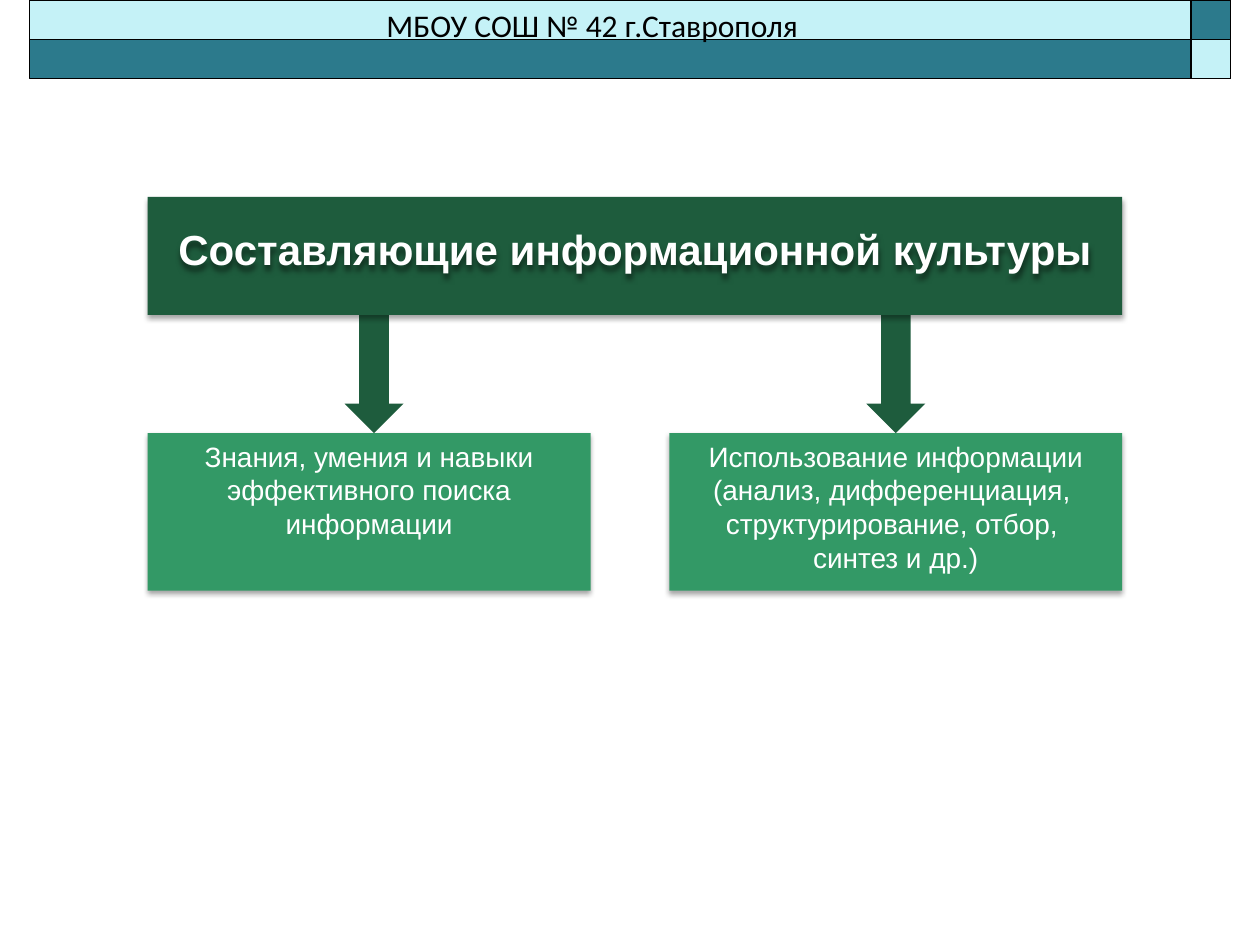
from dataclasses import dataclass

import pptx
import pptx.dml.color
import pptx.enum.shapes
import pptx.enum.text
import pptx.oxml
import pptx.oxml.ns
import pptx.util
from pptx.shapes.autoshape import Shape

Pt = pptx.util.Pt
SHAPES = pptx.enum.shapes.MSO_SHAPE
ALIGN = pptx.enum.text.PP_ALIGN
ANCHOR = pptx.enum.text.MSO_ANCHOR

COLORS = {
    "heading": "1E5C3D",
    "branch": "339966",
    "light": "C5F2F7",
    "dark": "2C7A8C",
    "white": "FFFFFF",
    "black": "000000",
}

FONTS = {
    "heading": {"name": "Arial", "size": Pt(24), "bold": True},
    "branch": {"name": "Arial", "size": Pt(16), "bold": False},
    "school": {"name": "Calibri", "size": Pt(18), "bold": False},
}


@dataclass
class Box:
    left: float
    top: float
    width: float
    height: float

    def lengths(self) -> list:
        return [Pt(v) for v in (self.left, self.top, self.width, self.height)]


@dataclass
class Branch:
    box: Box
    arrow_center: float
    lines: list[str]


def color(name: str) -> pptx.dml.color.RGBColor:
    return pptx.dml.color.RGBColor.from_string(COLORS[name])


def add_filled(shapes, kind, box: Box, fill: str, outline: bool = False) -> Shape:
    shape = shapes.add_shape(kind, *box.lengths())
    shape.shadow.inherit = False
    shape.fill.solid()
    shape.fill.fore_color.rgb = color(fill)
    if outline:
        shape.line.color.rgb = color("black")
        shape.line.width = Pt(0.75)
    else:
        shape.line.fill.background()
    return shape


def add_shadow(shape: Shape, blur: float, distance: float, opacity: int) -> None:
    shape.shadow.inherit = False
    effects = shape._element.spPr.find(pptx.oxml.ns.qn("a:effectLst"))
    effects.append(pptx.oxml.parse_xml(
        f'<a:outerShdw {pptx.oxml.ns.nsdecls("a")} blurRad="{Pt(blur)}" '
        f'dist="{Pt(distance)}" dir="5400000" rotWithShape="0">'
        f'<a:srgbClr val="{COLORS["black"]}"><a:alpha val="{opacity * 1000}"/>'
        "</a:srgbClr></a:outerShdw>"))


def write(shape: Shape, lines: list[str], font: str, text_color: str, align) -> None:
    frame = shape.text_frame
    settings = {
        "word_wrap": True,
        "auto_size": pptx.enum.text.MSO_AUTO_SIZE.NONE,
        "vertical_anchor": ANCHOR.TOP,
    }
    for key, value in settings.items():
        setattr(frame, key, value)
    frame.text = "\n".join(lines)
    for paragraph in frame.paragraphs:
        paragraph.alignment = align
        for run in paragraph.runs:
            for key, value in FONTS[font].items():
                setattr(run.font, key, value)
            run.font.color.rgb = color(text_color)


def draw_branch(slide, branch: Branch) -> None:
    shape = add_filled(slide.shapes, SHAPES.RECTANGLE, branch.box, "branch")
    add_shadow(shape, 3.1, 1.8, 35)
    write(shape, branch.lines, "branch", "white", ALIGN.CENTER)
    width, height = 33.75, 67.5
    arrow_box = Box(branch.arrow_center - width / 2, branch.box.top - height, width, height)
    add_filled(slide.shapes, SHAPES.DOWN_ARROW, arrow_box, "heading")


def draw_heading(slide) -> None:
    banner = add_filled(slide.shapes, SHAPES.RECTANGLE, Box(84.4, 112.5, 556.9, 67.5), "heading")
    add_shadow(banner, 3.1, 1.8, 35)
    title = slide.shapes.title
    title.left, title.top, title.width, title.height = Box(84.4, 124, 556.9, 50).lengths()
    write(title, ["Составляющие информационной культуры"], "heading", "white", ALIGN.CENTER)
    add_shadow(title, 3.1, 3, 50)
    # The title must lie above the banner
    slide.shapes._spTree.append(title._element)


def draw_header(slide) -> None:
    left, width, row = 16.9, 686.25, 22.5
    group = slide.shapes.add_group_shape()
    for cell_left, cell_width, fills in (
        (left, width, ("light", "dark")),
        (left + width - row, row, ("dark", "light")),
    ):
        for index, fill in enumerate(fills):
            box = Box(cell_left, index * row, cell_width, row)
            add_filled(group.shapes, SHAPES.RECTANGLE, box, fill, outline=True)
    school = group.shapes.add_textbox(*Box(213.8, 0, 275.8, 29).lengths())
    write(school, ["МБОУ СОШ № 42 г.Ставрополя"], "school", "black", ALIGN.LEFT)


BRANCHES = [
    Branch(Box(84.4, 247.5, 253.1, 90), 213.75,
           ["Знания, умения и навыки эффективного поиска информации"]),
    Branch(Box(382.5, 247.5, 258.8, 90), 511.9,
           ["Использование информации (анализ, дифференциация, ",
            "структурирование, отбор, ",
            "синтез и др.)"]),
]


def main() -> None:
    presentation = pptx.Presentation()
    presentation.slide_width, presentation.slide_height = Pt(720), Pt(540)
    slide = presentation.slides.add_slide(presentation.slide_layouts.get_by_name("Title Only"))

    # Diagram
    for branch in BRANCHES:
        draw_branch(slide, branch)
    draw_heading(slide)

    # School header
    draw_header(slide)
    presentation.save("out.pptx")


if __name__ == "__main__":
    main()
